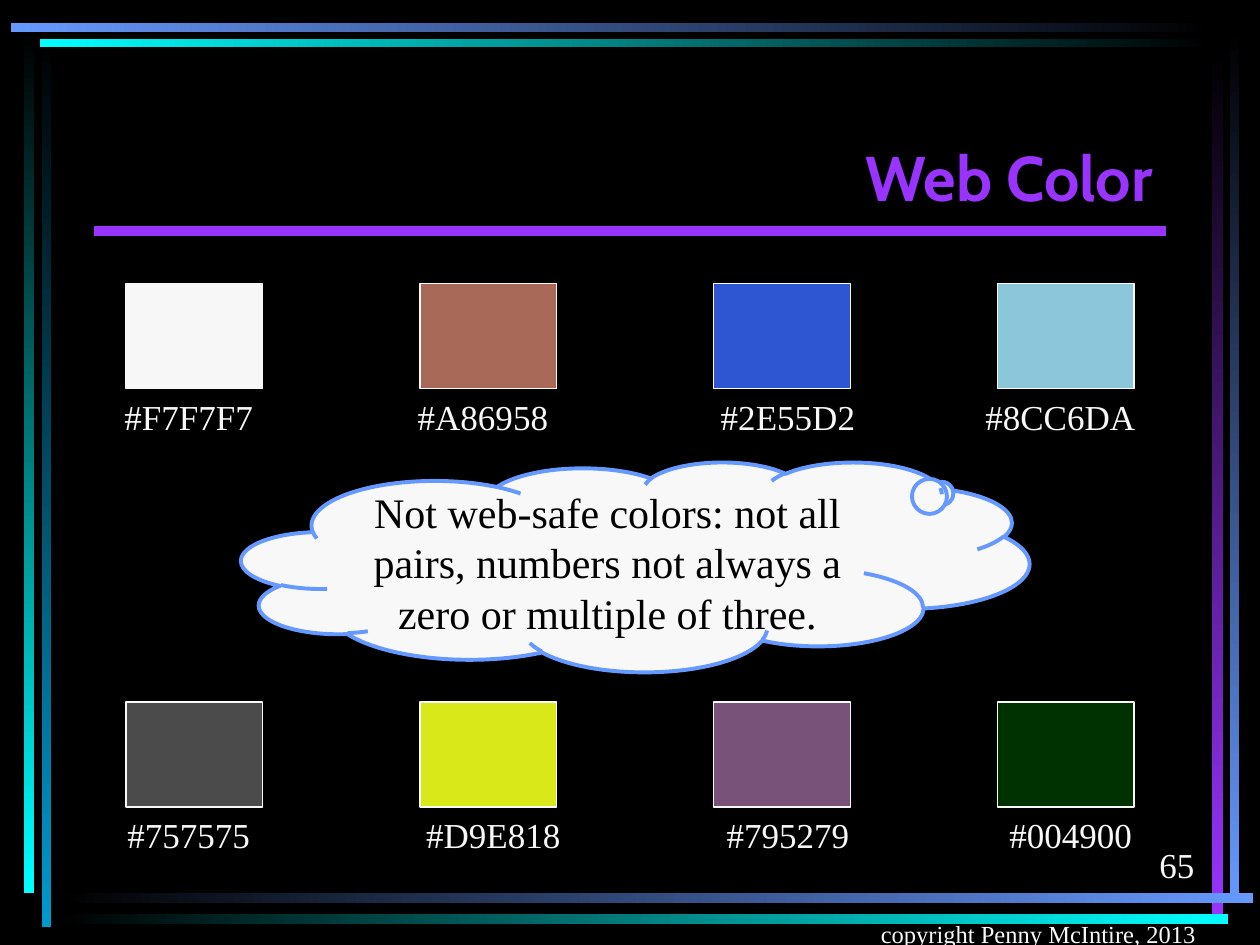
from dataclasses import dataclass

from lxml.etree import SubElement
from pptx import Presentation
from pptx.dml.color import RGBColor
from pptx.enum.shapes import MSO_CONNECTOR as Conn, MSO_SHAPE as Shape
from pptx.enum.text import MSO_ANCHOR as Anchor, MSO_AUTO_SIZE as AutoSize, PP_ALIGN as Align
from pptx.oxml.ns import qn
from pptx.util import Cm, Pt

BLACK = RGBColor(0x00, 0x00, 0x00)
OFF_WHITE = RGBColor(0xF8, 0xF8, 0xF8)
PURPLE = RGBColor(0x99, 0x33, 0xFF)
BLUE = RGBColor(0x66, 0x99, 0xFF)
CYAN = RGBColor(0x00, 0xFF, 0xFF)
TEAL = RGBColor(0x00, 0x99, 0xCC)
GRAY = RGBColor(0x4B, 0x4B, 0x4B)
DARK_GREEN = RGBColor(0x00, 0x31, 0x00)

SERIF = "Times New Roman"
SWATCH_W, SWATCH_H = 2.75, 2.12
LABEL_W, LABEL_H = 6.77, 1.09
COLUMNS = (2.54, 8.47, 14.39, 20.11)
TOP_ROW, BOTTOM_ROW = 5.72, 14.15


@dataclass
class Bar:
    left: float
    top: float
    width: float
    height: float
    start: RGBColor
    end: RGBColor


@dataclass
class Swatch:
    column: int
    top: float
    label: str
    label_left: float
    fill: RGBColor


BARS = [
    Bar(0.84, 0.71, 0.2, 17.98, BLACK, TEAL),
    Bar(0.48, 0.64, 0.2, 17.37, BLACK, CYAN),
    Bar(24.79, 0.61, 0.18, 17.6, BLACK, BLUE),
    Bar(24.43, 1.07, 0.23, 17.35, BLACK, PURPLE),
    Bar(1.14, 18.01, 24.13, 0.2, BLACK, BLUE),
    Bar(1.14, 18.42, 23.62, 0.2, BLACK, CYAN),
    Bar(0.81, 0.79, 23.67, 0.15, CYAN, BLACK),
    Bar(0.22, 0.47, 24.28, 0.18, BLUE, BLACK),
]

SWATCHES = [
    Swatch(0, TOP_ROW, "#F7F7F7", 0.42, RGBColor(0xF7, 0xF7, 0xF7)),
    Swatch(1, TOP_ROW, "#A86958", 6.35, RGBColor(0xA8, 0x69, 0x58)),
    Swatch(2, TOP_ROW, "#2E55D2", 12.5, RGBColor(0x2E, 0x55, 0xD2)),
    Swatch(3, TOP_ROW, "#8CC6DA", 17.99, RGBColor(0x8C, 0xC6, 0xDA)),
    Swatch(0, BOTTOM_ROW, "#757575", 0.42, GRAY),
    Swatch(1, BOTTOM_ROW, "#D9E818", 6.56, RGBColor(0xD9, 0xE8, 0x18)),
    Swatch(2, BOTTOM_ROW, "#795279", 12.5, RGBColor(0x79, 0x52, 0x79)),
    Swatch(3, BOTTOM_ROW, "#004900", 18.2, DARK_GREEN),
]


def write(tf, text: str, *, size: float = 20, font: str = SERIF,
          color: RGBColor = OFF_WHITE, bold: bool = False, align=Align.CENTER,
          anchor=Anchor.TOP, before: float = 0) -> None:
    tf.word_wrap = True
    tf.vertical_anchor = anchor
    p = tf.paragraphs[0]
    p.alignment = align
    p.space_before = Pt(before)
    r = p.add_run()
    r.text = text
    r.font.size = Pt(size)
    r.font.name = font
    r.font.bold = bold
    r.font.color.rgb = color


def add_text_box(s, left: float, top: float, width: float, height: float,
                 text: str, **fmt) -> None:
    tf = s.shapes.add_textbox(Cm(left), Cm(top), Cm(width), Cm(height)).text_frame
    write(tf, text, **fmt)


def add_outlined(s, kind, left: float, top: float, width: float, height: float,
                 fill: RGBColor, line: RGBColor, weight: float):
    sp = s.shapes.add_shape(kind, Cm(left), Cm(top), Cm(width), Cm(height))
    sp.shadow.inherit = False
    sp.fill.solid()
    sp.fill.fore_color.rgb = fill
    sp.line.color.rgb = line
    sp.line.width = Pt(weight)
    return sp


def add_bar(s, bar: Bar) -> None:
    sp = s.shapes.add_shape(Shape.RECTANGLE, Cm(bar.left), Cm(bar.top),
                            Cm(bar.width), Cm(bar.height))
    sp.shadow.inherit = False
    sp.line.fill.background()
    sp.fill.gradient()
    sp.fill.gradient_angle = 270 if bar.height > bar.width else 0
    for stop, color in zip(sp.fill.gradient_stops, (bar.start, bar.end)):
        stop.color.rgb = color


def add_rule(s) -> None:
    line = s.shapes.add_connector(Conn.STRAIGHT, Cm(1.9), Cm(4.66), Cm(23.5), Cm(4.66))
    line.line.color.rgb = PURPLE
    line.line.width = Pt(6)
    SubElement(line._element.spPr, qn("a:effectLst"))


def add_title(s) -> None:
    title = s.shapes.title
    title.left, title.top, title.width, title.height = Cm(1.9), Cm(1.27), Cm(21.59), Cm(3.18)
    write(title.text_frame, "Web Color", size=36, font="Cabin", color=PURPLE,
          bold=True, align=Align.RIGHT, anchor=Anchor.BOTTOM)


def add_swatch(s, swatch: Swatch) -> None:
    add_outlined(s, Shape.RECTANGLE, COLUMNS[swatch.column], swatch.top,
                 SWATCH_W, SWATCH_H, swatch.fill, OFF_WHITE, 0.75)
    add_text_box(s, swatch.label_left, swatch.top + SWATCH_H, LABEL_W, LABEL_H, swatch.label)


def add_callout(s) -> None:
    cloud = add_outlined(s, Shape.CLOUD_CALLOUT, 4.87, 9.31, 15.88, 4.23,
                         OFF_WHITE, BLUE, 2.25)
    cloud.adjustments[0] = 0.39
    cloud.adjustments[1] = -0.35
    write(cloud.text_frame,
          "Not web-safe colors: not all pairs, numbers not always a zero or multiple of three.",
          size=24, color=BLACK, anchor=Anchor.MIDDLE, before=12)


def main() -> None:
    prs = Presentation()
    prs.slide_width, prs.slide_height = Cm(25.4), Cm(19.05)
    s = prs.slides.add_slide(prs.slide_layouts[5])
    s.background.fill.solid()
    s.background.fill.fore_color.rgb = BLACK
    for bar in BARS:
        add_bar(s, bar)
    add_rule(s)
    add_text_box(s, 19.05, 16.71, 5.28, 1.27, "65",
                 align=Align.RIGHT, anchor=Anchor.BOTTOM)
    add_text_box(s, 16.31, 17.98, 8.05, 1.27, "copyright Penny McIntire, 2013",
                 size=14, align=Align.RIGHT, anchor=Anchor.BOTTOM)
    add_title(s)
    for swatch in SWATCHES:
        add_swatch(s, swatch)
    add_callout(s)
    prs.save("out.pptx")


if __name__ == "__main__":
    main()
